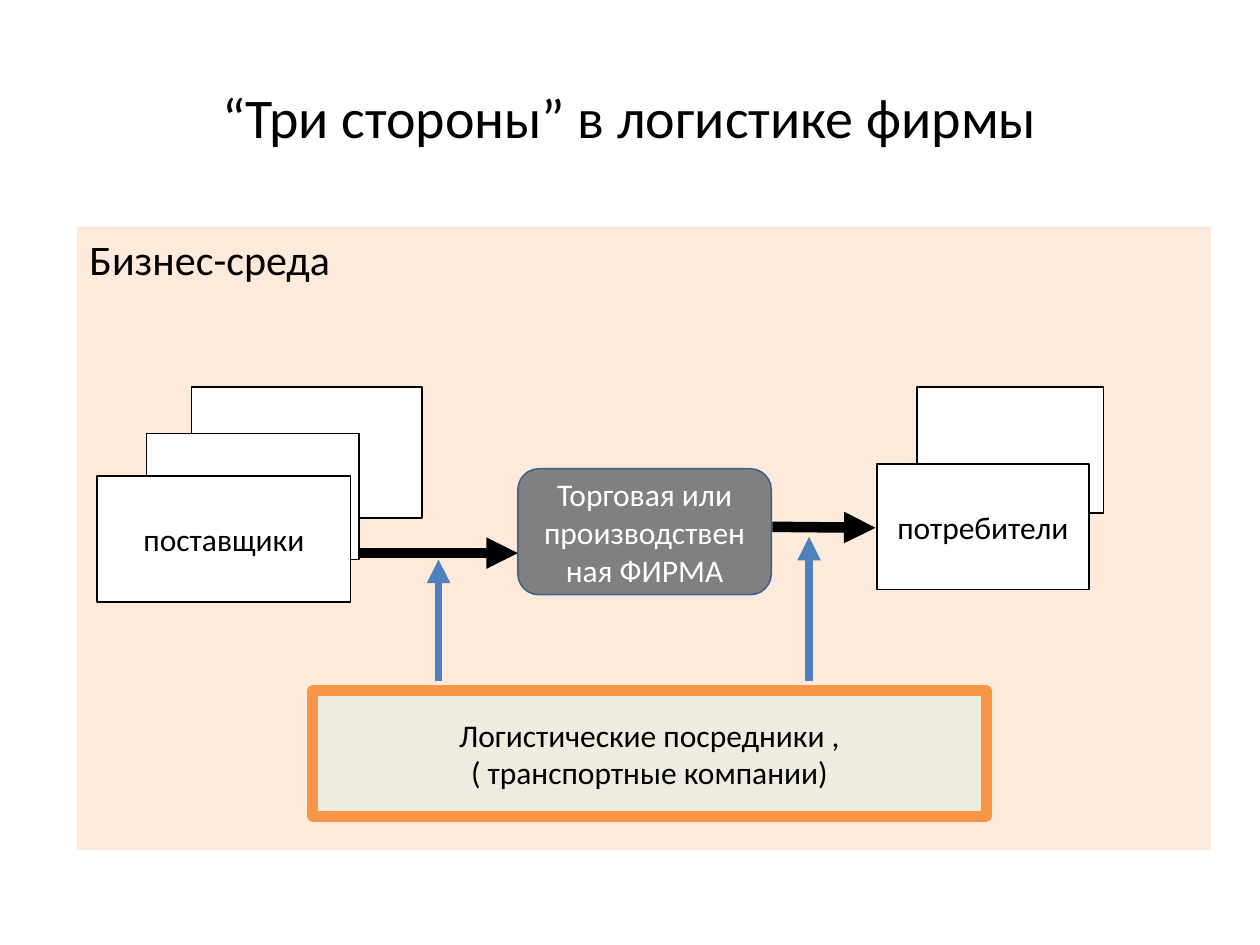
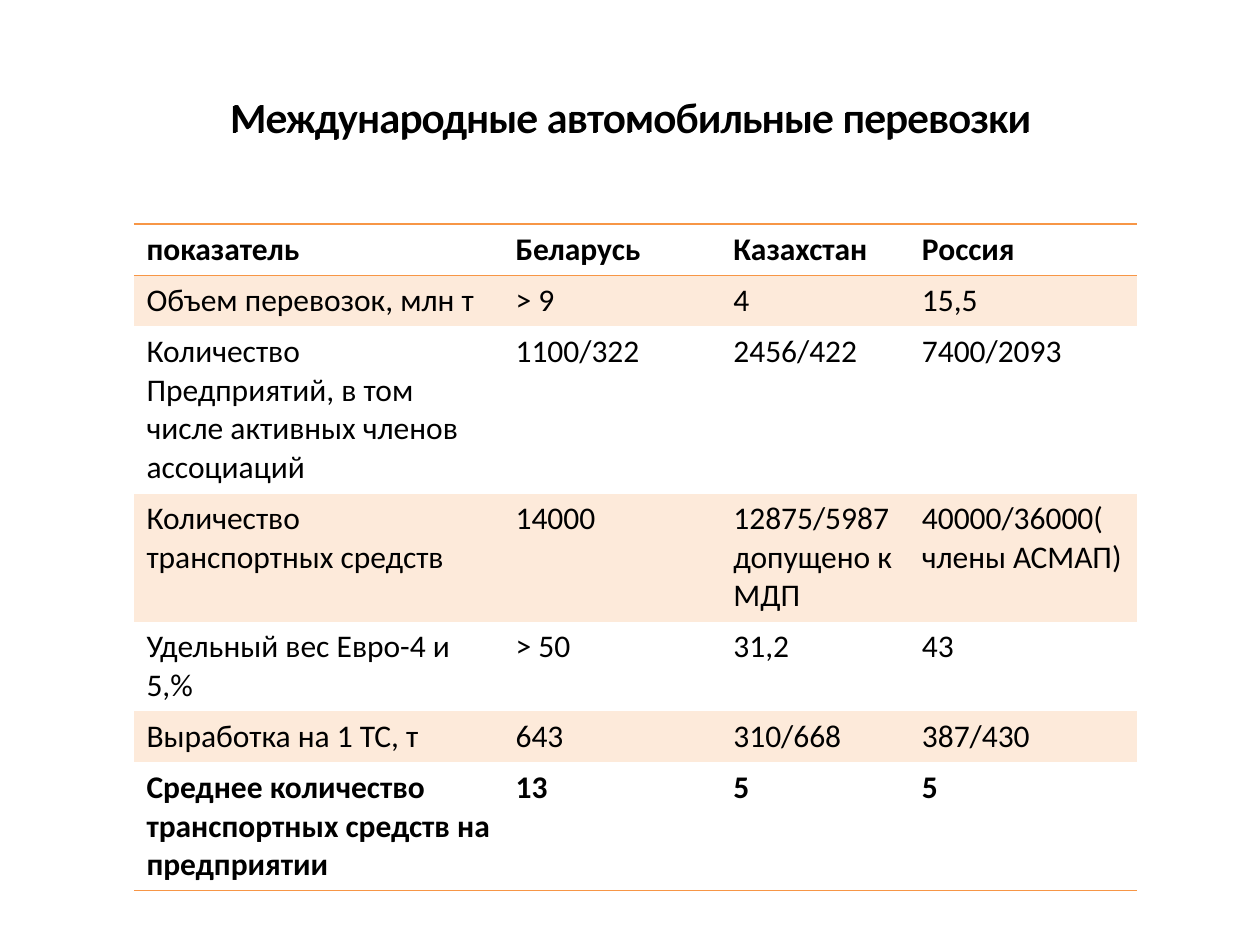
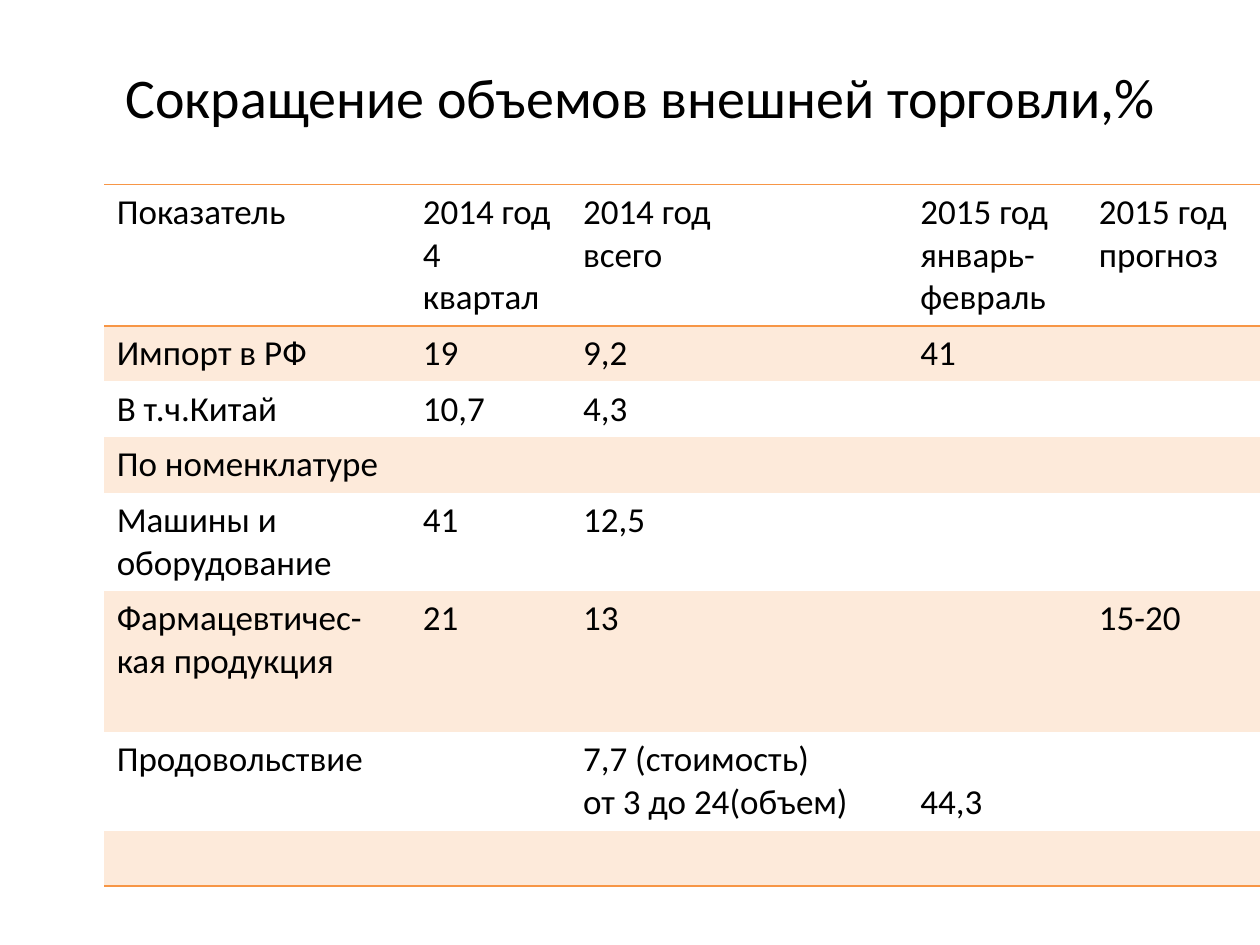
from lxml import etree
from pptx import Presentation
from pptx.dml.color import RGBColor
from pptx.enum.shapes import MSO_CONNECTOR as Connector, MSO_SHAPE as Shape
from pptx.enum.text import MSO_ANCHOR as Anchor, PP_ALIGN as Align
from pptx.oxml.ns import qn
from pptx.util import Cm, Pt

FONT = "Calibri"
COLORS = {
    "text": "000000",
    "white": "FFFFFF",
    "peach": "FDEADA",
    "orange": "F79646",
    "sand": "EEECE1",
    "gray": "808080",
    "navy": "3A5F8C",
    "blue": "4F81BD",
}
TITLE_BOX = (1.27, 0.76, 22.86, 3.18)
TITLE_ONLY, TITLE_AND_BODY = 5, 1
PLAIN_TABLE_STYLE = "{2D5ABB26-0587-4C30-8999-92F81FD0307C}"

ROAD_TITLE = "Международные автомобильные перевозки"
ROAD_ROWS = [
    ["показатель", "Беларусь", "Казахстан", "Россия"],
    ["Объем перевозок, млн т", "> 9", "4", "15,5"],
    ["Количество\nПредприятий, в том числе активных членов ассоциаций",
     "1100/322", "2456/422", "7400/2093"],
    ["Количество транспортных средств", "14000",
     "12875/5987\nдопущено к МДП", "40000/36000( члены АСМАП)"],
    ["Удельный вес Евро-4 и 5,%", "> 50", "31,2", "43"],
    ["Выработка на 1 ТС, т", "643", "310/668", "387/430"],
    ["Среднее количество\nтранспортных средств на предприятии", "13", "5", "5"],
]
TRADE_ROWS = [
    ["Показатель", "2014 год\n4 квартал", "2014 год\nвсего",
     "2015 год\nянварь-февраль", "2015 год\nпрогноз"],
    ["Импорт в РФ", "19", "9,2", "41", ""],
    ["В т.ч.Китай", "10,7", "4,3", "", ""],
    ["По номенклатуре", "", "", "", ""],
    ["Машины и оборудование", "41", "12,5", "", ""],
    ["Фармацевтичес-кая продукция", "21", "13", "", "15-20"],
    ["Продовольствие", "", "7,7 (стоимость)\nот 3 до 24(объем)", "44,3", ""],
    ["", "", "", "", ""],
]


def rgb(name):
    return RGBColor.from_string(COLORS[name])


def write_text(frame, text, size=18, color="text", bold=False, align=Align.LEFT,
               anchor=Anchor.TOP):
    """Fill a text frame or table cell, one paragraph per line of text."""
    frame.word_wrap = True
    frame.vertical_anchor = anchor
    for index, line in enumerate(text.split("\n")):
        para = frame.paragraphs[0] if index == 0 else frame.add_paragraph()
        para.alignment = align
        span = para.add_run()
        span.text = line
        span.font.name = FONT
        span.font.size = Pt(size)
        span.font.bold = bold
        span.font.color.rgb = rgb(color)


def place(item, box):
    item.left, item.top, item.width, item.height = map(Cm, box)


def add_page(deck, layout, title, size=32, title_box=TITLE_BOX):
    page = deck.slides.add_slide(deck.slide_layouts[layout])
    place(page.shapes.title, title_box)
    write_text(page.shapes.title.text_frame, title, size=size,
               align=Align.CENTER, anchor=Anchor.MIDDLE)
    return page


def add_box(page, box, text="", kind=Shape.RECTANGLE, fill="white", line="text",
            line_width=0.85, color="text"):
    item = page.shapes.add_shape(kind, *map(Cm, box))
    item.shadow.inherit = False
    item.fill.solid()
    item.fill.fore_color.rgb = rgb(fill)
    item.line.color.rgb = rgb(line)
    item.line.width = Pt(line_width)
    if text:
        write_text(item.text_frame, text, color=color, align=Align.CENTER,
                   anchor=Anchor.MIDDLE)


def add_arrow(page, start, end, color, width):
    arrow = page.shapes.add_connector(Connector.STRAIGHT, *map(Cm, start + end))
    arrow.line.color.rgb = rgb(color)
    arrow.line.width = Pt(width)
    etree.SubElement(arrow.line._get_or_add_ln(), qn("a:tailEnd"), type="triangle")
    etree.SubElement(arrow._element.spPr, qn("a:effectLst"))


def add_environment(page, box):
    """Turn the body placeholder into the tinted panel with its caption."""
    panel = page.placeholders[1]
    place(panel, box)
    panel.fill.solid()
    panel.fill.fore_color.rgb = rgb("peach")
    write_text(panel.text_frame, "Бизнес-среда", size=24)
    properties = panel.text_frame.paragraphs[0]._p.get_or_add_pPr()
    properties.set("marL", "0")
    properties.set("indent", "0")
    etree.SubElement(properties, qn("a:buNone"))


def add_supply_chain(page, box):
    left, top = box[:2]

    def at(x, y, *size):
        return (left + x, top + y, *size)

    for supplier in [(2.31, 3.23, 4.65, 2.64), (1.4, 4.17, 4.29, 2.54)]:
        add_box(page, at(*supplier))
    add_box(page, at(0.41, 5.03, 5.11, 2.54), "поставщики")
    add_box(page, at(8.89, 4.88, 5.11, 2.54), "Торговая или производственная ФИРМА",
            kind=Shape.ROUNDED_RECTANGLE, fill="gray", line="navy", color="white")
    add_box(page, at(16.94, 3.23, 3.76, 2.54))
    add_box(page, at(16.13, 4.78, 4.27, 2.54), "потребители")
    add_box(page, at(4.75, 9.35, 13.59, 2.54),
            "Логистические посредники ,\n( транспортные компании)",
            fill="sand", line="orange", line_width=6)

    for start, end in [((5.69, 6.58), (8.89, 6.58)), ((14.02, 6.05), (16.1, 6.07))]:
        add_arrow(page, at(*start), at(*end), "text", 6)
    for x, tip in [(7.29, 6.71), (14.76, 6.25)]:
        add_arrow(page, at(x, 9.15), at(x, tip), "blue", 4.5)


def add_rule(cell, side):
    """Draw an orange line on one side of a cell: lnT or lnB."""
    line = etree.SubElement(cell._tc.get_or_add_tcPr(), qn(f"a:{side}"), w=str(Pt(1)))
    fill = etree.SubElement(line, qn("a:solidFill"))
    etree.SubElement(fill, qn("a:srgbClr"), val=COLORS["orange"])


def add_banded_table(page, corner, widths, heights, rows, size, bold_rows=()):
    """Table with tinted odd rows and rules around the header and at the end."""
    last = len(rows) - 1
    frame = page.shapes.add_table(
        len(rows), len(widths), *map(Cm, (*corner, sum(widths), sum(heights))))
    table = frame.table
    table.first_row = table.horz_banding = False
    next(frame._element.iter(qn("a:tableStyleId"))).text = PLAIN_TABLE_STYLE
    for column, width in zip(table.columns, widths):
        column.width = Cm(width)
    for index, (height, texts) in enumerate(zip(heights, rows)):
        table.rows[index].height = Cm(height)
        for cell, text in zip(table.rows[index].cells, texts):
            if index == 0:
                add_rule(cell, "lnT")
            if index in (0, last):
                add_rule(cell, "lnB")
            if index % 2:
                cell.fill.solid()
                cell.fill.fore_color.rgb = rgb("peach")
            else:
                cell.fill.background()
            if text:
                write_text(cell.text_frame, text, size=size, bold=index in bold_rows)
    return table


def build_parties_page(deck):
    page = add_page(deck, TITLE_AND_BODY, "“Три стороны” в логистике фирмы")
    panel_box = (1.55, 4.57, 22.86, 12.57)
    add_environment(page, panel_box)
    add_supply_chain(page, panel_box)


def build_road_page(deck):
    page = add_page(deck, TITLE_ONLY, ROAD_TITLE, size=24)
    add_banded_table(page, (2.7, 4.52), (7.44, 4.39, 3.8, 4.6),
                     (1.03, 1.03, 3.37, 2.58, 1.81, 1.03, 2.58),
                     ROAD_ROWS, size=18, bold_rows=(0, len(ROAD_ROWS) - 1))
    overlay = page.shapes.add_textbox(*map(Cm, (1.3, 0.74, 22.86, 3.18)))
    write_text(overlay.text_frame, ROAD_TITLE, size=24, align=Align.CENTER,
               anchor=Anchor.MIDDLE)


def build_trade_page(deck):
    page = add_page(deck, TITLE_ONLY, "Сокращение объемов внешней торговли,%",
                    title_box=(1.7, 0.76, 22.43, 2.36))
    table = add_banded_table(page, (2.1, 3.72), (6.17, 3.23, 6.8, 3.6, 3.5),
                             (2.85, 1.12, 1.12, 1.12, 1.99, 2.84, 1.98, 1.12),
                             TRADE_ROWS, size=20)
    table.cell(6, 3).vertical_anchor = Anchor.BOTTOM
    table.cell(7, 0).merge(table.cell(7, 4))


def main():
    deck = Presentation()
    deck.slide_width, deck.slide_height = Cm(25.4), Cm(19.05)
    build_parties_page(deck)
    build_road_page(deck)
    build_trade_page(deck)
    deck.save("out.pptx")


if __name__ == "__main__":
    main()
